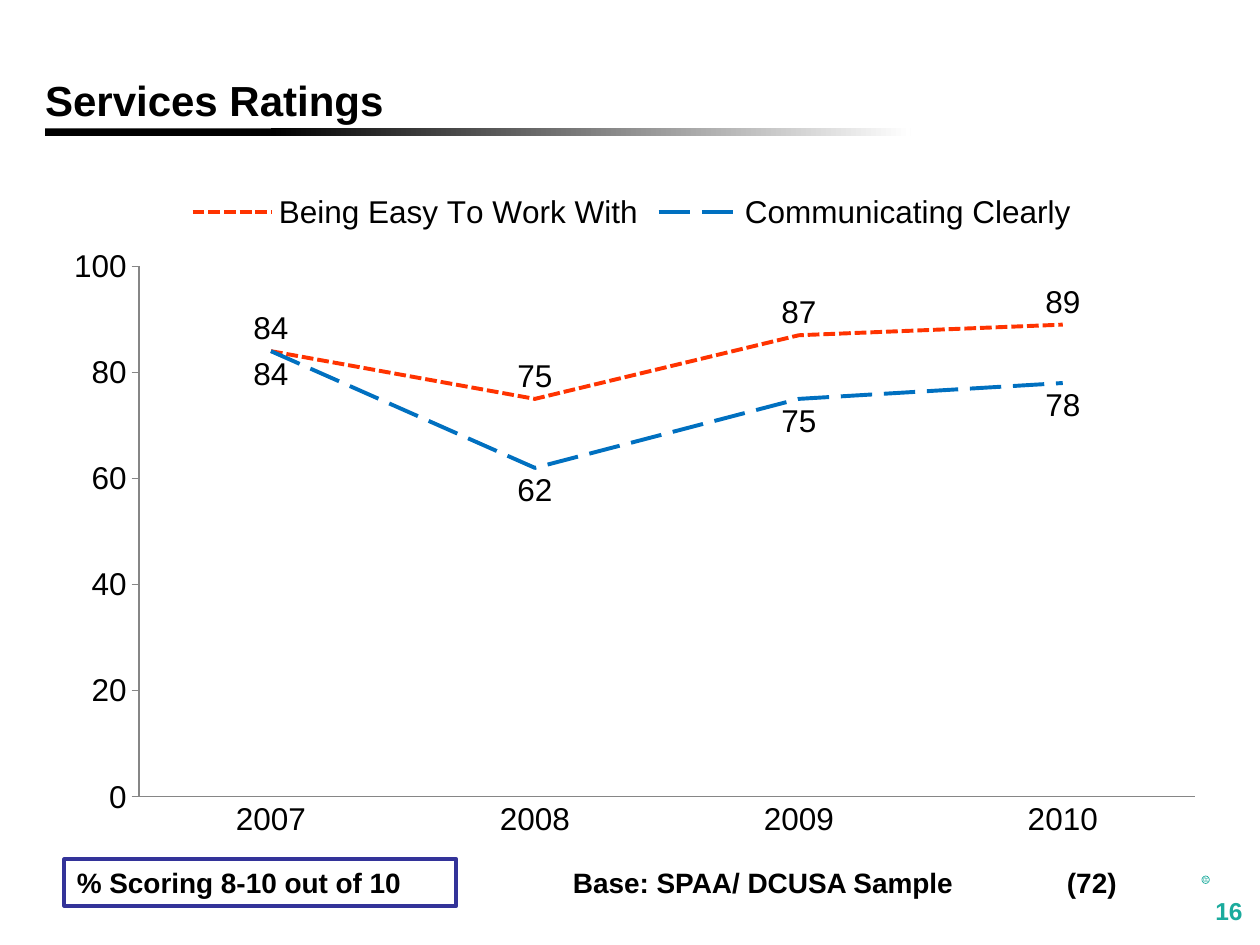
from dataclasses import dataclass

from lxml import etree
from pptx import Presentation
from pptx import util as u
from pptx.chart import data as chart_data
from pptx.dml.color import RGBColor
from pptx.enum import chart as charts, dml, shapes, text
from pptx.oxml import ns, parse_xml

BLACK = RGBColor(0x00, 0x00, 0x00)
WHITE = RGBColor(0xFF, 0xFF, 0xFF)
TEAL = RGBColor(0x1B, 0xAB, 0x9D)
INDIGO = RGBColor(0x33, 0x33, 0x99)
ORANGE = RGBColor(0xFF, 0x33, 0x00)
BLUE = RGBColor(0x00, 0x70, 0xC0)
GRAY = RGBColor(0x86, 0x86, 0x86)
FONT = "Arial"


@dataclass(frozen=True)
class Box:
    """A place on the slide, in centimetres."""
    left: float
    top: float
    width: float
    height: float

    def lengths(self) -> tuple:
        return tuple(u.Cm(n) for n in (self.left, self.top, self.width, self.height))


@dataclass(frozen=True)
class Rating:
    name: str
    values: tuple
    color: RGBColor
    dash: dml.MSO_LINE
    label_position: charts.XL_LABEL_POSITION


YEARS = ("2007", "2008", "2009", "2010")
RATINGS = (
    Rating("Being Easy To Work With", (84, 75, 87, 89), ORANGE,
           dml.MSO_LINE.SQUARE_DOT, charts.XL_LABEL_POSITION.ABOVE),
    Rating("Communicating Clearly", (84, 62, 75, 78), BLUE,
           dml.MSO_LINE.LONG_DASH, charts.XL_LABEL_POSITION.BELOW),
)


def write_text(shape, content: str, *, size: float, color: RGBColor = BLACK,
               bold: bool = True, align=text.PP_ALIGN.LEFT,
               anchor=text.MSO_ANCHOR.TOP, inset: tuple = (0.25, 0.13),
               center_tab: float = 0) -> None:
    frame = shape.text_frame
    frame.word_wrap = True
    frame.vertical_anchor = anchor
    frame.margin_left = frame.margin_right = u.Cm(inset[0])
    frame.margin_top = frame.margin_bottom = u.Cm(inset[1])
    paragraph = frame.paragraphs[0]
    paragraph.alignment = align
    if center_tab:
        tabs = etree.SubElement(paragraph._p.get_or_add_pPr(), ns.qn("a:tabLst"))
        etree.SubElement(tabs, ns.qn("a:tab"), pos=str(u.Cm(center_tab)), algn="ctr")
    run = paragraph.add_run()
    run.text = content
    run.font.name = FONT
    run.font.size = u.Pt(size)
    run.font.bold = bold
    run.font.color.rgb = color


def add_text(slide, box: Box, content: str, **text_format):
    shape = slide.shapes.add_textbox(*box.lengths())
    write_text(shape, content, **text_format)
    return shape


def add_outline(slide, kind, box: Box, color: RGBColor, width: float):
    shape = slide.shapes.add_shape(kind, *box.lengths())
    shape.shadow.inherit = False
    shape.fill.background()
    shape.line.color.rgb = color
    shape.line.width = u.Pt(width)
    return shape


def add_bar(slide, box: Box, start: RGBColor, end: RGBColor) -> None:
    """Draw a borderless bar that fades from start to end, or is solid if they match."""
    bar = slide.shapes.add_shape(shapes.MSO_SHAPE.RECTANGLE, *box.lengths())
    bar.shadow.inherit = False
    bar.line.fill.background()
    if start == end:
        bar.fill.solid()
        bar.fill.fore_color.rgb = start
        return
    bar.fill.gradient()
    bar.fill.gradient_angle = 0
    for stop, color in zip(bar.fill.gradient_stops, (start, end)):
        stop.color.rgb = color


def set_plot_area(chart, x: float, y: float, w: float, h: float) -> None:
    """Fix the inner plot area, in fractions of the chart."""
    sizes = "".join(f'<c:{tag} val="{value}"/>'
                    for tag, value in (("x", x), ("y", y), ("w", w), ("h", h)))
    layout = parse_xml(
        f'<c:layout {ns.nsdecls("c")}><c:manualLayout><c:layoutTarget val="inner"/>'
        f'<c:xMode val="edge"/><c:yMode val="edge"/>{sizes}</c:manualLayout></c:layout>')
    plot_area = chart._chartSpace.chart.plotArea
    for old in plot_area.findall(ns.qn("c:layout")):
        plot_area.remove(old)
    plot_area.insert(0, layout)


def add_ratings_chart(slide, box: Box) -> None:
    data = chart_data.CategoryChartData(number_format="0")
    data.categories = YEARS
    for rating in RATINGS:
        data.add_series(rating.name, rating.values)
    chart = slide.shapes.add_chart(
        charts.XL_CHART_TYPE.LINE, *box.lengths(), data).chart
    chart.has_title = False
    chart.font.name = FONT
    chart.font.size = u.Pt(18)
    chart.font.color.rgb = BLACK
    chart.has_legend = True
    chart.legend.position = charts.XL_LEGEND_POSITION.TOP
    chart.legend.include_in_layout = False
    set_plot_area(chart, 0.08, 0.13, 0.9, 0.79)

    value_axis, category_axis = chart.value_axis, chart.category_axis
    value_axis.minimum_scale, value_axis.maximum_scale = 0, 100
    value_axis.major_unit = 20
    value_axis.has_major_gridlines = False
    value_axis.major_tick_mark = charts.XL_TICK_MARK.OUTSIDE
    category_axis.major_tick_mark = charts.XL_TICK_MARK.NONE
    for axis in (value_axis, category_axis):
        axis.format.line.color.rgb = GRAY
        axis.format.line.width = u.Pt(0.75)

    plot = chart.plots[0]
    plot.vary_by_categories = False
    for series, rating in zip(plot.series, RATINGS):
        series.smooth = False
        series.marker.style = charts.XL_MARKER_STYLE.NONE
        series.format.line.color.rgb = rating.color
        series.format.line.width = u.Pt(2.25)
        series.format.line.dash_style = rating.dash
        series.data_labels.show_value = True
        series.data_labels.position = rating.label_position


def main() -> None:
    presentation = Presentation()
    presentation.slide_width, presentation.slide_height = u.Cm(25.4), u.Cm(19.05)
    slide = presentation.slides.add_slide(presentation.slide_layouts[6])

    registered = add_text(slide, Box(24, 17.53, 0.61, 0.43), "R", size=4, color=TEAL,
                          bold=False, align=text.PP_ALIGN.CENTER,
                          anchor=text.MSO_ANCHOR.MIDDLE, inset=(0, 0))
    registered.rotation = 270
    add_outline(slide, shapes.MSO_SHAPE.OVAL, Box(24.23, 17.66, 0.15, 0.15), TEAL, 0.4)

    add_bar(slide, Box(0.91, 2.59, 8.15, 0.15), BLACK, BLACK)
    add_bar(slide, Box(5.46, 2.59, 12.9, 0.15), BLACK, WHITE)
    add_text(slide, Box(0.91, 0.81, 17.53, 1.7), "Services Ratings", size=24,
             anchor=text.MSO_ANCHOR.BOTTOM, inset=(0, 0))

    add_ratings_chart(slide, Box(0.91, 3.61, 23.65, 13.54))

    add_text(slide, Box(23.9, 17.93, 1.4, 0.79), "16", size=14, color=TEAL,
             align=text.PP_ALIGN.RIGHT)
    scoring = add_outline(slide, shapes.MSO_SHAPE.RECTANGLE,
                          Box(1.3, 17.32, 7.9, 0.94), INDIGO, 2.25)
    write_text(scoring, "% Scoring 8-10 out of 10", size=16,
               anchor=text.MSO_ANCHOR.MIDDLE)
    add_text(slide, Box(11.3, 17.32, 13.79, 0.94), "Base: SPAA/ DCUSA Sample\t(72)",
             size=16, anchor=text.MSO_ANCHOR.MIDDLE, center_tab=10.46)

    presentation.save("out.pptx")


if __name__ == "__main__":
    main()
